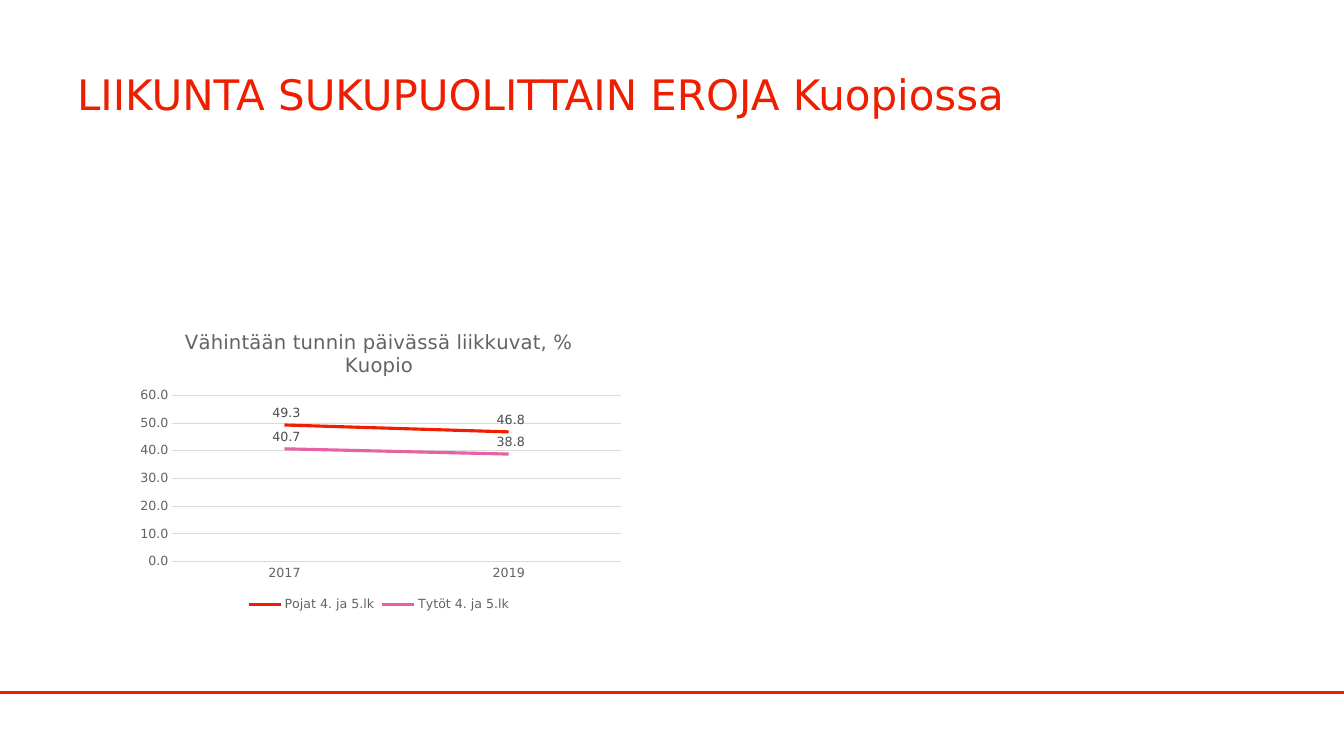
from dataclasses import dataclass

from lxml import etree
from pptx import Presentation
from pptx.chart.data import CategoryChartData
from pptx.dml.color import RGBColor as RGB
from pptx.enum.chart import (XL_CHART_TYPE as Kind, XL_LABEL_POSITION as Spot,
                             XL_LEGEND_POSITION as Side, XL_TICK_MARK as Tick)
from pptx.enum.shapes import MSO_CONNECTOR as Link
from pptx.enum.text import MSO_ANCHOR as Anchor
from pptx.oxml import parse_xml
from pptx.oxml.ns import nsdecls, qn
from pptx.util import Inches, Pt


@dataclass(frozen=True)
class Theme:
    face: str = "DejaVu Sans"
    red: str = "F01E00"
    pink: str = "E961A5"
    gray: str = "636363"
    dark: str = "4B4B4B"
    grid: str = "DBDBDB"
    head: float = 30
    title: float = 14
    small: float = 9


T = Theme()
WIDTH, HEIGHT = 13.33, 7.5
FORMAT = r"#\ ##0.0"
YEARS = ["2017", "2019"]
SERIES = [("Pojat 4. ja 5.lk", (49.3, 46.8), T.red),
          ("Tytöt 4. ja 5.lk", (40.7, 38.8), T.pink)]


def share(x, y, w, h):
    """Turn shares of the slide's size into a box of lengths."""
    return (Inches(x * WIDTH), Inches(y * HEIGHT),
            Inches(w * WIDTH), Inches(h * HEIGHT))


def style(font, size, color):
    font.name, font.size, font.bold = T.face, Pt(size), False
    font.color.rgb = RGB.from_string(color)


def stroke(line, color, width):
    line.color.rgb = RGB.from_string(color)
    line.width = Pt(width)


def add_rule(slide, box):
    x, y, w, h = box
    rule = slide.shapes.add_connector(Link.STRAIGHT, x, y, x + w, y + h)
    stroke(rule.line, T.red, 2)
    etree.SubElement(rule.element.spPr, qn("a:effectLst"))


def add_head(slide, box, text):
    frame = slide.shapes.add_textbox(*box).text_frame
    frame.word_wrap = True
    frame.vertical_anchor = Anchor.MIDDLE
    para = frame.paragraphs[0]
    para.text = text
    style(para.font, T.head, T.red)


def set_plot(chart, **shares):
    """Fix the inner plot area as shares of the chart."""
    plot = chart.element.find(".//" + qn("c:plotArea"))
    for old in plot.findall(qn("c:layout")):
        plot.remove(old)
    sizes = "".join(f'<c:{key} val="{val}"/>' for key, val in shares.items())
    plot.insert(0, parse_xml(
        f'<c:layout {nsdecls("c")}><c:manualLayout>'
        '<c:layoutTarget val="inner"/><c:xMode val="edge"/>'
        f'<c:yMode val="edge"/>{sizes}</c:manualLayout></c:layout>'))


def style_axes(chart):
    years, scale = chart.category_axis, chart.value_axis
    for axis in (years, scale):
        axis.major_tick_mark = axis.minor_tick_mark = Tick.NONE
        style(axis.tick_labels.font, T.small, T.gray)
    stroke(years.format.line, T.grid, 0.75)
    scale.format.line.fill.background()
    stroke(scale.major_gridlines.format.line, T.grid, 0.75)
    scale.minimum_scale, scale.maximum_scale, scale.major_unit = 0, 60, 10
    scale.tick_labels.number_format = FORMAT
    scale.tick_labels.number_format_is_linked = False


def style_line(line, color):
    line.smooth = False
    stroke(line.format.line, color, 2.25)
    tags = line.data_labels
    tags.show_value = True
    tags.position = Spot.ABOVE
    tags.number_format, tags.number_format_is_linked = FORMAT, False
    style(tags.font, T.small, T.dark)


def add_lines(slide, box, title):
    data = CategoryChartData(number_format=FORMAT)
    data.categories = YEARS
    for name, vals, _ in SERIES:
        data.add_series(name, vals)
    chart = slide.shapes.add_chart(Kind.LINE, *box, data).chart
    style(chart.font, T.small, T.gray)

    chart.has_title = True
    para = chart.chart_title.text_frame.paragraphs[0]
    para.text = title
    style(para.font, T.title, T.gray)
    chart.chart_title.include_in_layout = False

    chart.has_legend = True
    chart.legend.position = Side.BOTTOM
    chart.legend.include_in_layout = False
    style(chart.legend.font, T.small, T.gray)

    style_axes(chart)
    chart.plots[0].vary_by_categories = False
    for line, (_, _, color) in zip(chart.plots[0].series, SERIES):
        style_line(line, color)
    set_plot(chart, x=0.09, y=0.27, w=0.89, h=0.55)


def main():
    deck = Presentation()
    deck.slide_width, deck.slide_height = Inches(WIDTH), Inches(HEIGHT)
    slide = deck.slides.add_slide(deck.slide_layouts[6])
    add_rule(slide, share(0, 0.916, 1, 0))
    add_head(slide, share(0.05, 0.04, 0.9, 1 / 6),
             "LIIKUNTA SUKUPUOLITTAIN EROJA Kuopiossa")
    add_lines(slide, share(0.0945, 0.415, 0.375, 0.4),
              "Vähintään tunnin päivässä liikkuvat, % Kuopio")
    deck.save("out.pptx")


if __name__ == "__main__":
    main()
